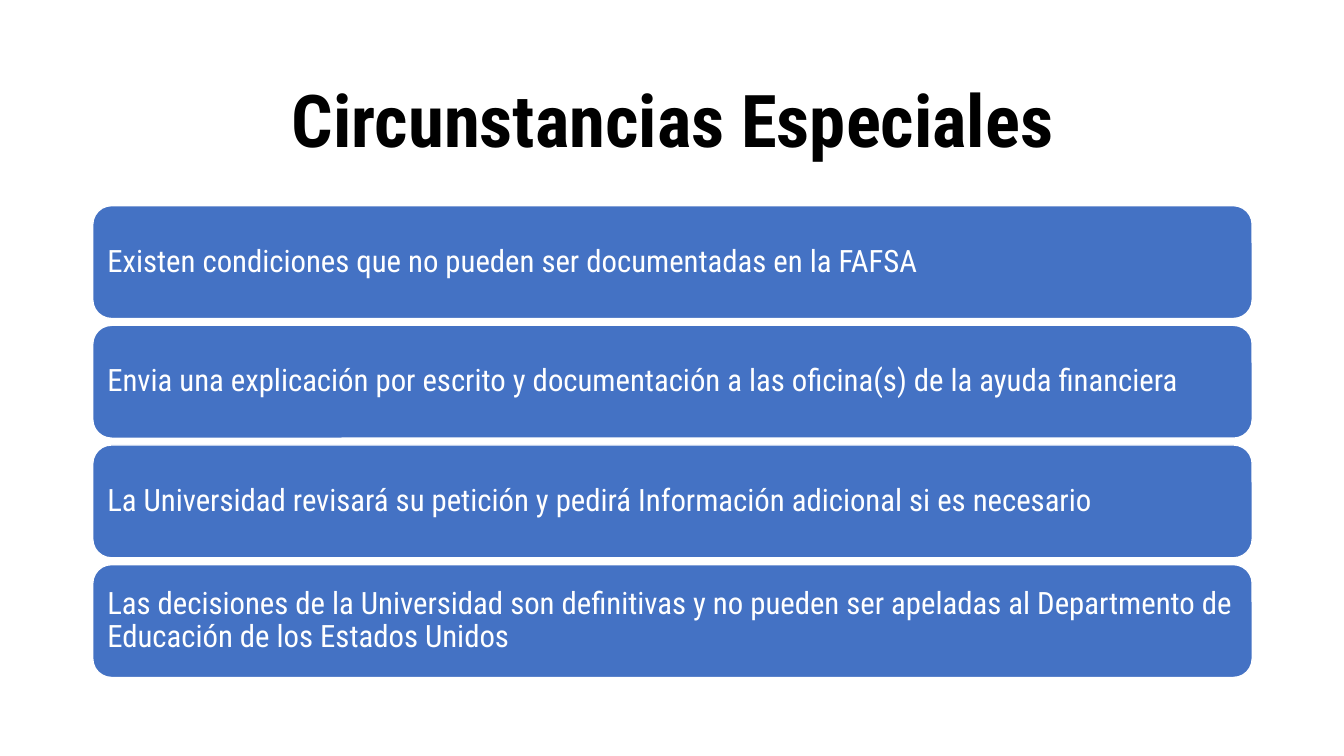
"""Build the special circumstances slide with a title and four stacked bars."""
import dataclasses

import pptx
import pptx.dml.color
import pptx.enum.shapes
import pptx.enum.text
import pptx.shapes.autoshape
import pptx.slide
import pptx.util

Inches = pptx.util.Inches
Align = pptx.enum.text.PP_ALIGN

FONT = "Roboto Condensed"
BLACK, WHITE, BLUE = "000000", "FFFFFF", "4472C4"
LEFT, WIDTH = 0.92, 11.5
BAR_TOP, BAR_HEIGHT, BAR_PITCH = 2.04, 1.12, 1.187


@dataclasses.dataclass(frozen=True)
class Bar:
    row: int
    text: str

    @property
    def top(self) -> float:
        return BAR_TOP + self.row * BAR_PITCH


STATEMENTS = (
    "Existen condiciones que no pueden ser documentadas en la FAFSA",
    "Envia una explicación por escrito y documentación a las oficina(s) de la ayuda financiera",
    "La Universidad revisará su petición y pedirá Información adicional si es necesario",
    "Las decisiones de la Universidad son definitivas y no pueden ser apeladas al "
    "Departmento de Educación de los Estados Unidos",
)


def color(value: str) -> pptx.dml.color.RGBColor:
    return pptx.dml.color.RGBColor.from_string(value)


def write_text(shape: pptx.shapes.autoshape.Shape, text: str, *, size: float, fill: str,
               bold: bool = False, align: Align = Align.LEFT, inset: float = 0.09) -> None:
    frame = shape.text_frame
    frame.word_wrap = True
    frame.vertical_anchor = pptx.enum.text.MSO_ANCHOR.MIDDLE
    frame.margin_left = frame.margin_right = Inches(inset)
    frame.margin_top = frame.margin_bottom = Inches(inset)
    paragraph = frame.paragraphs[0]
    paragraph.alignment = align
    paragraph.line_spacing = 0.9
    run = paragraph.add_run()
    run.text = text
    run.font.name = FONT
    run.font.size = pptx.util.Pt(size)
    run.font.bold = bold
    run.font.color.rgb = color(fill)


def draw_title(slide: pptx.slide.Slide, text: str) -> None:
    title = slide.shapes.add_textbox(Inches(LEFT), Inches(0.61), Inches(WIDTH), Inches(1.24))
    write_text(title, text, size=52, fill=BLACK, bold=True, align=Align.CENTER, inset=0.05)


def draw_bar(slide: pptx.slide.Slide, bar: Bar) -> None:
    shape = slide.shapes.add_shape(
        pptx.enum.shapes.MSO_SHAPE.ROUNDED_RECTANGLE,
        Inches(LEFT), Inches(bar.top), Inches(WIDTH), Inches(BAR_HEIGHT))
    shape.shadow.inherit = False
    shape.fill.solid()
    shape.fill.fore_color.rgb = color(BLUE)
    shape.line.color.rgb = color(WHITE)
    shape.line.width = pptx.util.Pt(1)
    write_text(shape, bar.text, size=22, fill=WHITE)


def main() -> None:
    presentation = pptx.Presentation()
    presentation.slide_width = Inches(13.33)
    presentation.slide_height = Inches(7.5)
    slide = presentation.slides.add_slide(presentation.slide_layouts[6])
    draw_title(slide, "Circunstancias Especiales")
    for row, statement in enumerate(STATEMENTS):
        draw_bar(slide, Bar(row, statement))
    presentation.save("out.pptx")


if __name__ == "__main__":
    main()
